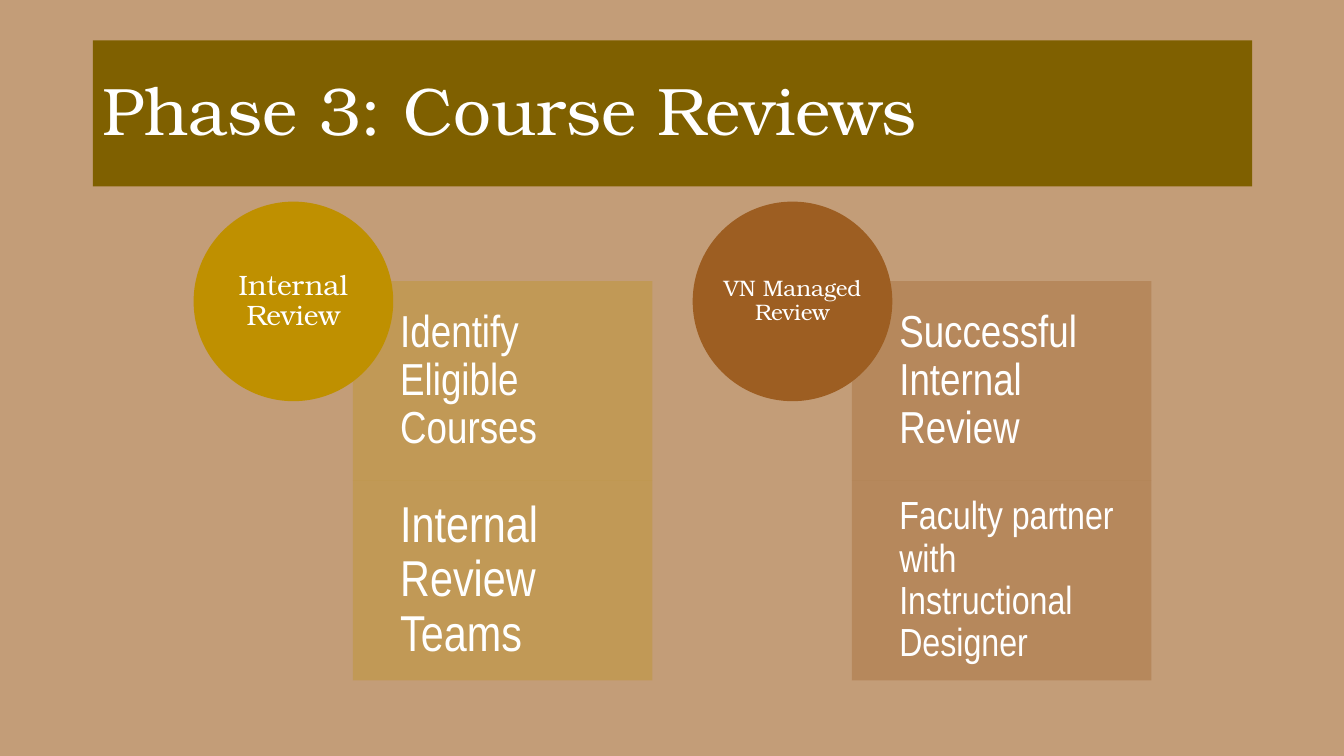
from lxml import etree
from pptx import Presentation
from pptx.dml.color import RGBColor
from pptx.enum.shapes import MSO_SHAPE
from pptx.enum.text import MSO_ANCHOR, MSO_AUTO_SIZE, PP_ALIGN
from pptx.oxml.ns import qn
from pptx.util import Inches, Pt

RECTANGLE, OVAL = MSO_SHAPE.RECTANGLE, MSO_SHAPE.OVAL
MIDDLE = MSO_ANCHOR.MIDDLE
NO_AUTOFIT = MSO_AUTO_SIZE.NONE
LEFT, CENTER = PP_ALIGN.LEFT, PP_ALIGN.CENTER

COLORS = {
    "background": "C39D78",
    "banner": "7F6000",
    "internal": "BF9000",
    "managed": "9D5E22",
    "text": "FFFFFF",
}
SERIF, NARROW = "TeX Gyre Bonum", "Arial Narrow"

CIRCLE_LEFT, CIRCLE_TOP = 1.92, 2
CARD_LEFT, CARD_TOP = 3.5, 2.79
CARD_WIDTH, CARD_HEIGHT = 2.97, 1.98
REVIEW_STEP = 4.95
CARD_INDENT = 0.47

REVIEWS = [
    ("internal", 28, "Internal Review", 20,
     [("Identify Eligible Courses", 32, 0.25),
      ("Internal Review Teams", 36, 0.28)]),
    ("managed", 32, "VN Managed Review", 16,
     [("Successful Internal Review", 32, 0.25),
      ("Faculty partner with Instructional Designer", 28, 0.22)]),
]


def rgb(color):
    return RGBColor.from_string(COLORS[color])


def write_text(shape, text, size, font, align=LEFT, insets=(0, 0, 0, 0)):
    frame = shape.text_frame
    frame.word_wrap = True
    frame.auto_size = NO_AUTOFIT
    frame.vertical_anchor = MIDDLE
    (frame.margin_left, frame.margin_top,
     frame.margin_right, frame.margin_bottom) = map(Inches, insets)
    paragraph = frame.paragraphs[0]
    paragraph.alignment = align
    paragraph.line_spacing = 0.9
    run = paragraph.add_run()
    run.text = text
    run.font.size = Pt(size)
    run.font.name = font
    run.font.color.rgb = rgb("text")


def paint(shape, color, opacity=100):
    shape.fill.solid()
    shape.fill.fore_color.rgb = rgb(color)
    if opacity < 100:
        tint = shape.element.spPr.find(f"{qn('a:solidFill')}/{qn('a:srgbClr')}")
        etree.SubElement(tint, qn("a:alpha"), val=str(opacity * 1000))


def add_block(slide, kind, left, top, width, height, color, opacity=100):
    block = slide.shapes.add_shape(
        kind, Inches(left), Inches(top), Inches(width), Inches(height))
    block.shadow.inherit = False
    block.line.fill.background()
    paint(block, color, opacity)
    return block


def add_review(slide, offset, color, opacity, name, name_size, steps):
    for row, (step, size, inset) in enumerate(steps):
        card = add_block(slide, RECTANGLE, CARD_LEFT + offset,
                         CARD_TOP + row * CARD_HEIGHT,
                         CARD_WIDTH, CARD_HEIGHT, color, opacity)
        write_text(card, step, size, NARROW,
                   insets=(CARD_INDENT, inset, inset, inset))
    circle = add_block(slide, OVAL, CIRCLE_LEFT + offset, CIRCLE_TOP,
                       CARD_HEIGHT, CARD_HEIGHT, color)
    write_text(circle, name, name_size, SERIF, align=CENTER)


def add_title(slide, text):
    title = slide.shapes.title
    title.left, title.top = Inches(0.92), Inches(0.4)
    title.width, title.height = Inches(11.5), Inches(1.45)
    paint(title, "banner")
    write_text(title, text, 48, SERIF, insets=(0.1, 0.05, 0.1, 0.05))


def main():
    deck = Presentation()
    deck.slide_width, deck.slide_height = Inches(13.33), Inches(7.5)
    slide = deck.slides.add_slide(deck.slide_layouts[5])
    slide.background.fill.solid()
    slide.background.fill.fore_color.rgb = rgb("background")
    add_title(slide, "Phase 3: Course Reviews")
    for column, review in enumerate(REVIEWS):
        add_review(slide, column * REVIEW_STEP, *review)
    deck.save("out.pptx")


if __name__ == "__main__":
    main()
